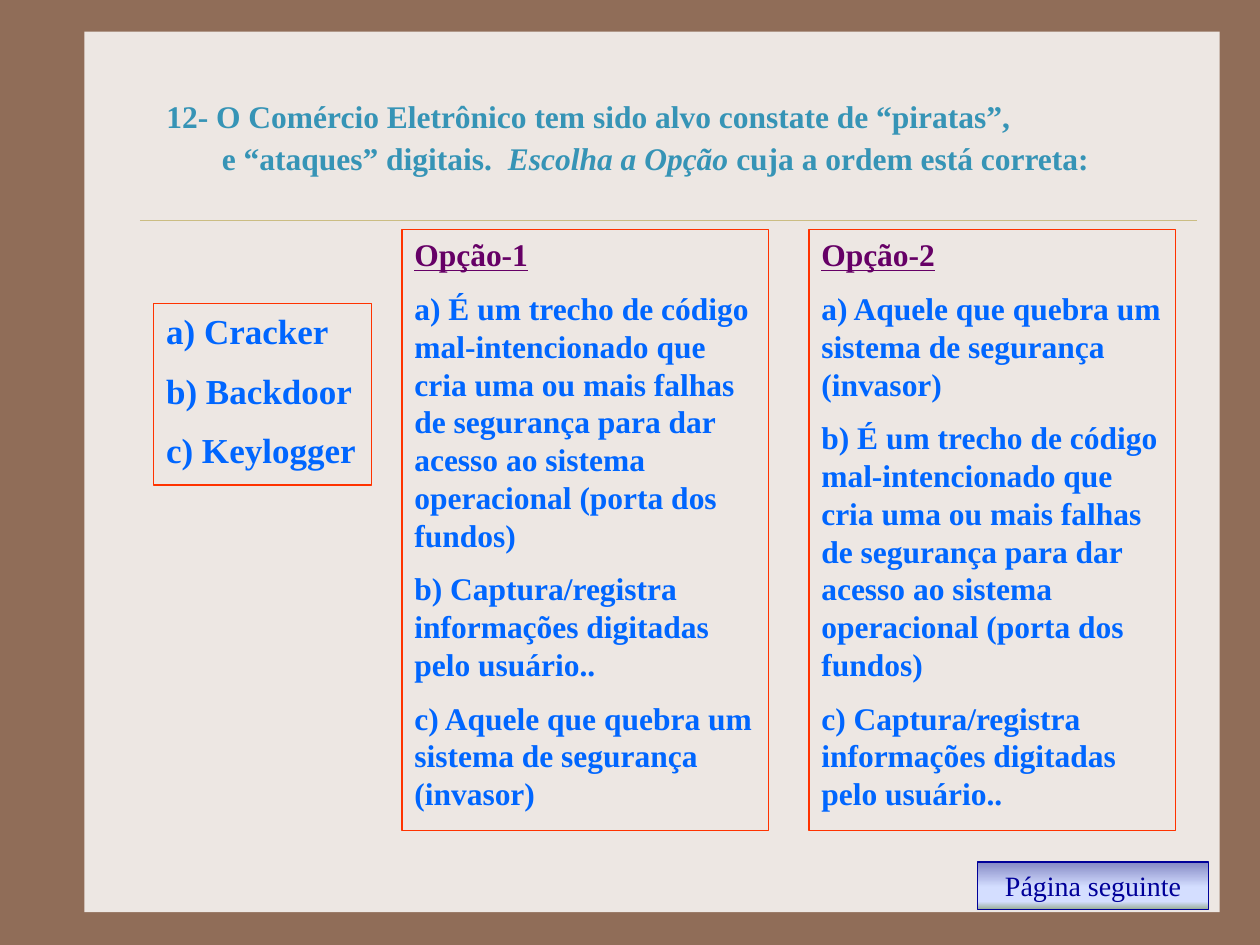
"""Build a quiz slide that matches security terms with two option lists."""
from copy import deepcopy

from lxml import etree
from pptx import Presentation
from pptx.dml.color import RGBColor
from pptx.enum.shapes import MSO_CONNECTOR, MSO_SHAPE
from pptx.enum.text import MSO_ANCHOR, MSO_AUTO_SIZE, PP_ALIGN
from pptx.oxml.ns import qn
from pptx.util import Inches, Pt

RECTANGLE = MSO_SHAPE.RECTANGLE
STRAIGHT = MSO_CONNECTOR.STRAIGHT
TOP = MSO_ANCHOR.TOP
NO_AUTOFIT = MSO_AUTO_SIZE.NONE
LEFT, CENTER = PP_ALIGN.LEFT, PP_ALIGN.CENTER
FONT = "Times New Roman"
BLUE, PURPLE, NAVY, RED = "0066FF", "660066", "000099", "FF3300"


def color(value):
    return RGBColor.from_string(value)


def add_box(slide, position, line, texts, size, text_color, bold=True, align=LEFT):
    shape = slide.shapes.add_shape(RECTANGLE, *[Inches(value) for value in position])
    shape.shadow.inherit = False
    shape.fill.background()
    shape.line.color.rgb = color(line)
    shape.line.width = Pt(0.75)
    frame = shape.text_frame
    frame.word_wrap = True
    frame.vertical_anchor = TOP
    for index, text in enumerate(texts):
        paragraph = frame.add_paragraph() if index else frame.paragraphs[0]
        paragraph.text = text
        paragraph.alignment = align
        paragraph.space_before = Pt(size / 2 if index else 0)
        paragraph.font.name = FONT
        paragraph.font.size = Pt(size)
        paragraph.font.bold = bold
        paragraph.font.color.rgb = color(text_color)
    return shape


presentation = Presentation()
presentation.slide_width = Inches(10)
presentation.slide_height = Inches(7.5)
slide = presentation.slides.add_slide(presentation.slide_layouts[5])
slide.background.fill.solid()
slide.background.fill.fore_color.rgb = color("906D58")

panel = slide.shapes.add_shape(RECTANGLE, Inches(0.67), Inches(0.25), Inches(9.01), Inches(6.99))
panel.shadow.inherit = False
panel.fill.solid()
panel.fill.fore_color.rgb = color("EDE7E3")
panel.line.fill.background()

divider = slide.shapes.add_connector(STRAIGHT, Inches(1.11), Inches(1.75), Inches(9.5), Inches(1.75))
divider.line.color.rgb = color("CBBD83")
divider.line.width = Pt(0.25)
etree.SubElement(divider._element.spPr, qn("a:effectLst"))

title = slide.shapes.title
slide.shapes._spTree.append(title._element)
title.left, title.top = Inches(1.22), Inches(0.8)
title.width, title.height = Inches(7.53), Inches(0.67)
frame = title.text_frame
frame.auto_size = NO_AUTOFIT
frame.word_wrap = False
frame.vertical_anchor = TOP
question = [
    [("12- O Comércio Eletrônico tem sido alvo constate de “piratas”,", False)],
    [("e “ataques” digitais.  ", False), ("Escolha a Opção", True),
     (" cuja a ordem está correta:", False)],
]
for index, runs in enumerate(question):
    paragraph = frame.add_paragraph() if index else frame.paragraphs[0]
    paragraph.alignment = LEFT
    paragraph.line_spacing = 0.7
    paragraph.space_before = Pt(9 * index)
    paragraph._p.get_or_add_pPr().set("marL", str(Inches(0.44 * index)))
    paragraph.font.name = FONT
    paragraph.font.size = Pt(18)
    paragraph.font.bold = True
    paragraph.font.color.rgb = color("3694B6")
    for text, italic in runs:
        run = paragraph.add_run()
        run.text = text
        run.font.italic = italic

terms = add_box(slide, (1.22, 2.41, 1.73, 1.44), RED,
                ["a) Cracker", "b) Backdoor", "c) Keylogger"], 20, BLUE)
for paragraph in terms.text_frame.paragraphs:
    properties = paragraph._p.get_or_add_pPr()
    properties.set("marL", str(Inches(0.5)))
    properties.set("indent", str(Inches(-0.5)))

button = add_box(slide, (7.76, 6.84, 1.83, 0.38), NAVY, ["Página seguinte"], 16, NAVY,
                 bold=False, align=CENTER)
button.fill.gradient()
button.fill.gradient_angle = 270
stop_list = button._element.spPr.find(".//" + qn("a:gsLst"))
for _ in range(2):
    stop_list.append(deepcopy(stop_list[0]))
stops = [(0, "8488C4"), (0.53, "D4DEFF"), (0.83, "D4DEFF"), (1, "96AB94")]
for stop, (position, value) in zip(button.fill.gradient_stops, stops):
    stop.position = position
    stop.color.rgb = color(value)

cracker = "Aquele que quebra um sistema de segurança (invasor)"
backdoor = ("É um trecho de código mal-intencionado que cria uma ou mais falhas de segurança "
            "para dar acesso ao sistema operacional (porta dos fundos)")
keylogger = "Captura/registra informações digitadas pelo usuário.."
options = [
    ("Opção-1", 3.19, [backdoor, keylogger, cracker]),
    ("Opção-2", 6.42, [cracker, backdoor, keylogger]),
]
for heading, left, answers in options:
    texts = [heading] + [f"{letter}) {answer}" for letter, answer in zip("abc", answers)]
    option = add_box(slide, (left, 1.82, 2.91, 4.77), RED, texts, 18, BLUE)
    heading_font = option.text_frame.paragraphs[0].font
    heading_font.underline = True
    heading_font.color.rgb = color(PURPLE)

presentation.save("out.pptx")
